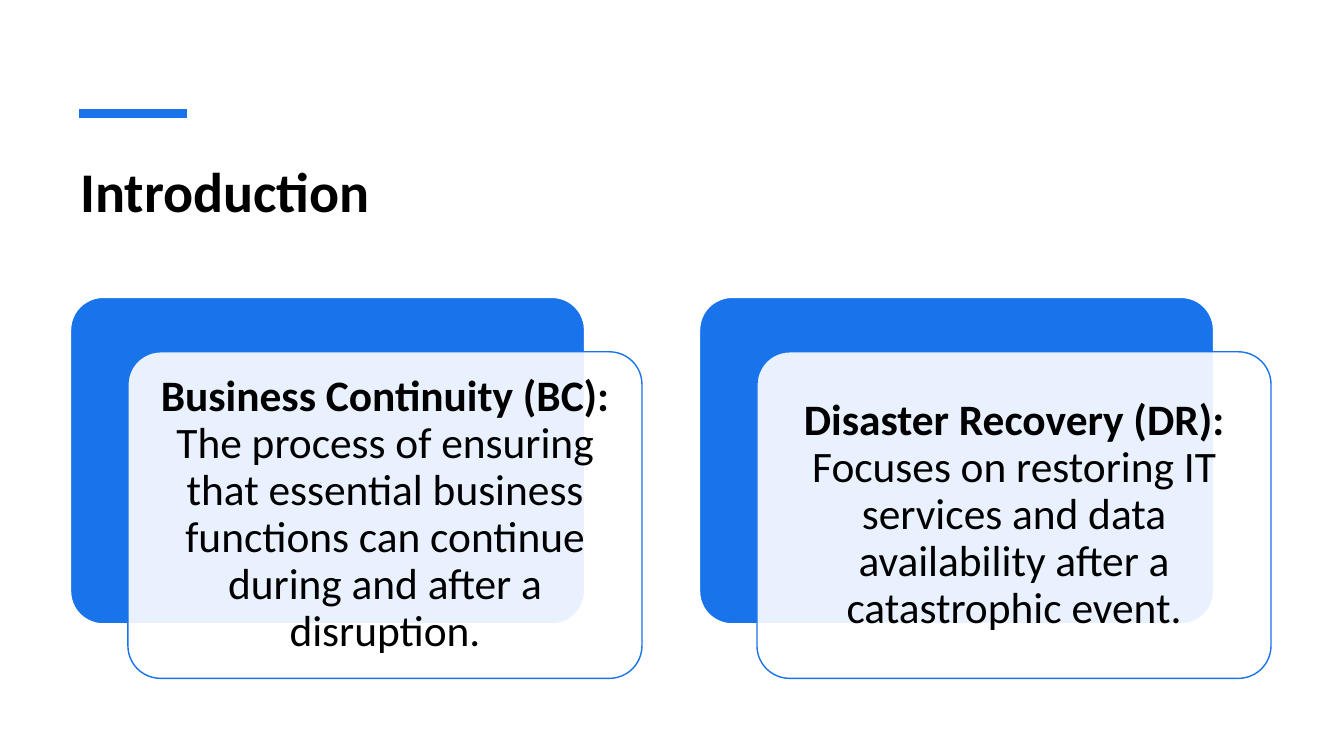
from lxml import etree
from pptx import Presentation
from pptx.dml.color import RGBColor
from pptx.enum.shapes import MSO_CONNECTOR, MSO_SHAPE
from pptx.enum.text import MSO_ANCHOR, PP_ALIGN
from pptx.oxml.ns import qn
from pptx.util import Pt

BLUE = RGBColor(0x19, 0x73, 0xEB)
WHITE = RGBColor(0xFF, 0xFF, 0xFF)
BLACK = RGBColor(0, 0, 0)
ROUNDED, STRAIGHT = MSO_SHAPE.ROUNDED_RECTANGLE, MSO_CONNECTOR.STRAIGHT
TOP, MIDDLE = MSO_ANCHOR.TOP, MSO_ANCHOR.MIDDLE
LEFT, CENTER = PP_ALIGN.LEFT, PP_ALIGN.CENTER

# Layout in points
CARD_X, CARD_Y, CARD_W, CARD_H = 50.4, 212.4, 367.2, 233.3
CARD_PITCH = 449.3
PANEL_DX, PANEL_DY = 41, 38.9
TEXT_PAD = 6.8

CARDS = [
    ("Business Continuity (BC):",
     " The process of ensuring that essential business functions can continue "
     "during and after a disruption."),
    ("Disaster Recovery (DR):",
     " Focuses on restoring IT services and data availability after a "
     "catastrophic event."),
]


class SlideBuilder:
    font = "Calibri"

    def __init__(self, slide):
        self.shapes = slide.shapes

    def line(self, x1, y1, x2, y2, color, width):
        c = self.shapes.add_connector(STRAIGHT, Pt(x1), Pt(y1), Pt(x2), Pt(y2))
        c.line.color.rgb = color
        c.line.width = Pt(width)
        etree.SubElement(c._element.spPr, qn("a:effectLst"))

    def rounded(self, x, y, w, h, fill, outline, opacity=100):
        sp = self.shapes.add_shape(ROUNDED, Pt(x), Pt(y), Pt(w), Pt(h))
        sp.adjustments[0] = 0.1
        sp.shadow.inherit = False
        sp.fill.solid()
        sp.fill.fore_color.rgb = fill
        sp.line.color.rgb = outline
        sp.line.width = Pt(1)
        if opacity < 100:
            clr = sp._element.spPr.find(qn("a:solidFill"))[0]
            etree.SubElement(clr, qn("a:alpha"), val=str(opacity * 1000))

    def text(self, x, y, w, h, runs, size, anchor=TOP, align=LEFT,
             spacing=1.0, inset=None):
        tf = self.shapes.add_textbox(Pt(x), Pt(y), Pt(w), Pt(h)).text_frame
        frame = {"word_wrap": True, "vertical_anchor": anchor}
        if inset is not None:
            for side in ("left", "top", "right", "bottom"):
                frame[f"margin_{side}"] = Pt(inset)
        for name, value in frame.items():
            setattr(tf, name, value)
        p = tf.paragraphs[0]
        p.alignment = align
        p.line_spacing = spacing
        for content, bold in runs:
            r = p.add_run()
            r.text = content
            style = {"name": self.font, "size": Pt(size), "bold": bold}
            for name, value in style.items():
                setattr(r.font, name, value)
            r.font.color.rgb = BLACK

    def card(self, x, y, heading, body):
        self.rounded(x, y, CARD_W, CARD_H, BLUE, WHITE)
        x, y = x + PANEL_DX, y + PANEL_DY
        self.rounded(x, y, CARD_W, CARD_H, WHITE, BLUE, opacity=90)
        self.text(x + TEXT_PAD, y + TEXT_PAD,
                  CARD_W - 2 * TEXT_PAD, CARD_H - 2 * TEXT_PAD,
                  [(heading, True), (body, False)], 31,
                  MIDDLE, CENTER, spacing=0.9, inset=9.3)


def main():
    prs = Presentation()
    prs.slide_width, prs.slide_height = Pt(960), Pt(540)
    s = SlideBuilder(prs.slides.add_slide(prs.slide_layouts[6]))

    # Title with accent line
    s.text(50.4, 108, 857.5, 86.4, [("Introduction", True)], 40)
    s.line(56.4, 81.2, 133.4, 81.2, BLUE, 6)

    # Definition cards
    for i, (heading, body) in enumerate(CARDS):
        s.card(CARD_X + i * CARD_PITCH, CARD_Y, heading, body)

    prs.save("out.pptx")


if __name__ == "__main__":
    main()
